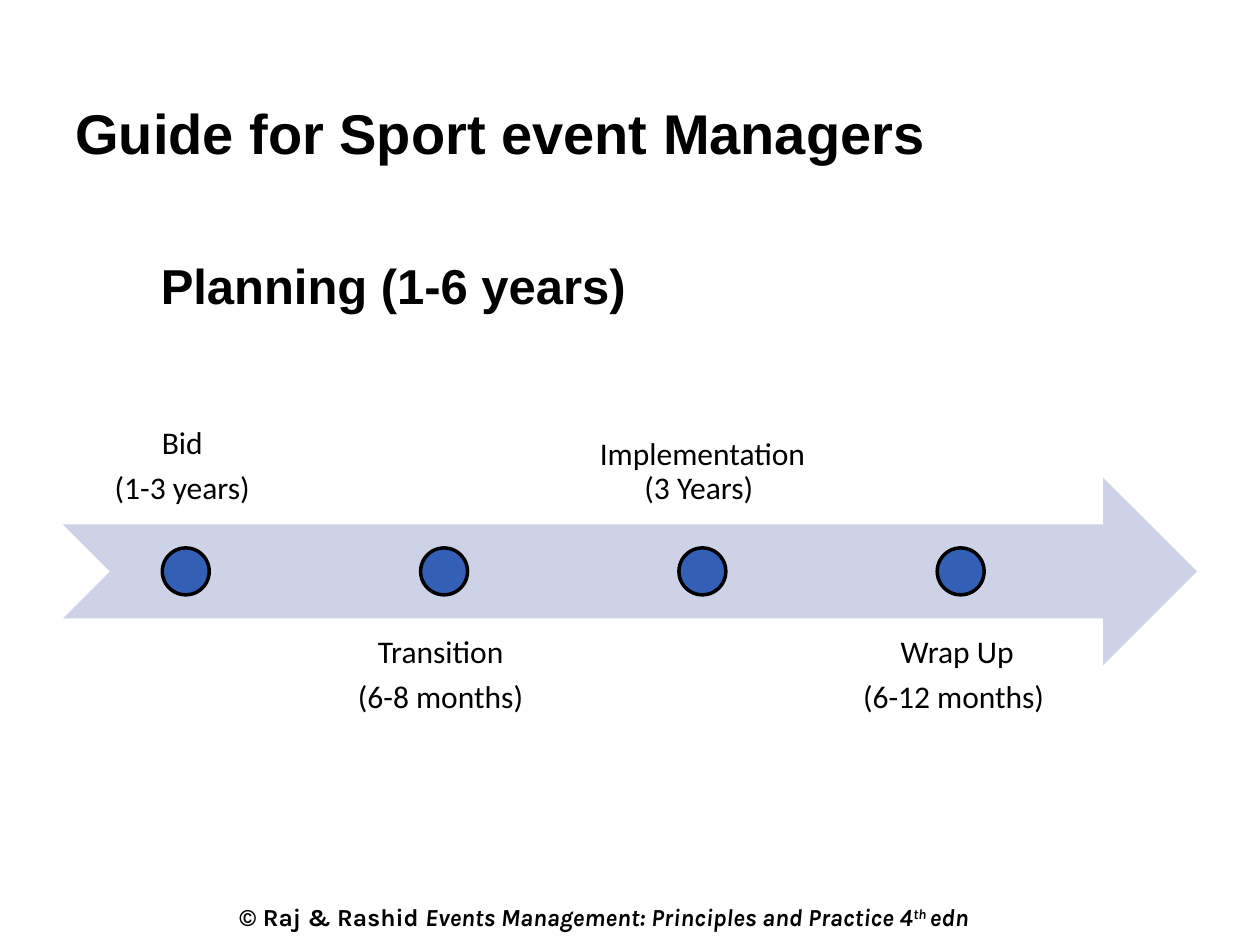
"""Builds the sport event planning timeline slide."""
from pptx import Presentation
from pptx.dml.color import RGBColor
from pptx.enum.shapes import MSO_SHAPE as Shape
from pptx.enum.text import MSO_ANCHOR as Anchor, PP_ALIGN as Align
from pptx.util import Inches, Pt

WIDTH, HEIGHT = 10, 7.5
BLACK, WHITE, BAND, DOT = "000000", "FFFFFF", "CED2E6", "345FB7"
TITLE = "Guide for Sport event Managers"
HEADING = "Planning (1-6 years) "
FOOTER = [
    ("© Raj & Rashid ", {"italic": False}, 0),
    ("Events Management: Principles and Practice 4", {"italic": True}, 0),
    ("th ", {"italic": True}, 30000),
    ("edn", {"italic": True}, 0),
]
STAGES = [
    ["Bid ", "(1-3 years) "],
    ["Transition ", "(6-8 months) "],
    ["Implementation (3 Years) "],
    ["Wrap Up ", "(6-12 months)  "],
]
TITLE_FONT = {"name": "Arial", "size": Pt(32), "bold": True}
HEADING_FONT = {"name": "Arial", "size": Pt(28), "bold": True}
STAGE_FONT = {"name": "Calibri", "size": Pt(18), "bold": False}
FOOTER_FONT = {"name": "Karla", "size": Pt(14), "bold": True}
STAGE_FORMAT = {"alignment": Align.CENTER, "line_spacing": 0.9, "space_after": Pt(6.3)}

MARGIN = WIDTH * 0.05
BAND_WIDTH = WIDTH - 2 * MARGIN
ROW = 1.49
BAND_TOP = 3.79
MIDDLE = BAND_TOP + ROW / 2
DOT_SIZE = ROW / 4
STAGE_WIDTH, PITCH = 1.95, 2.05
ABOVE, BELOW = 2.67, 4.91


def color(code):
    return RGBColor.from_string(code)


def apply(target, values):
    for key, value in values.items():
        setattr(target, key, value)


def add_run(paragraph, text, font):
    run = paragraph.add_run()
    run.text = text
    apply(run.font, font)
    run.font.color.rgb = color(BLACK)
    return run


def write(frame, lines, font, layout):
    for index, line in enumerate(lines):
        paragraph = frame.add_paragraph() if index else frame.paragraphs[0]
        apply(paragraph, layout)
        add_run(paragraph, line, font)


def add_box(slide, place, **frame_format):
    frame = slide.shapes.add_textbox(*map(Inches, place)).text_frame
    apply(frame, {"word_wrap": True, **frame_format})
    return frame


def add_solid(slide, kind, place, fill, outline=None):
    solid = slide.shapes.add_shape(kind, *map(Inches, place))
    solid.shadow.inherit = False
    solid.fill.solid()
    solid.fill.fore_color.rgb = color(fill)
    if outline:
        solid.line.color.rgb = color(outline)
        solid.line.width = Pt(2)
    else:
        solid.line.fill.background()
    return solid


def add_stage(slide, index, lines):
    left = MARGIN + index * PITCH
    below = index % 2
    inset = Inches(0.14)
    frame = add_box(
        slide, (left, BELOW if below else ABOVE, STAGE_WIDTH, ROW),
        vertical_anchor=Anchor.TOP if below else Anchor.BOTTOM,
        margin_left=inset, margin_right=inset, margin_top=inset, margin_bottom=inset)
    write(frame, lines, STAGE_FONT, STAGE_FORMAT)
    dot_left = left + (STAGE_WIDTH - DOT_SIZE) / 2
    add_solid(slide, Shape.OVAL, (dot_left, MIDDLE - DOT_SIZE / 2, DOT_SIZE, DOT_SIZE), DOT, BLACK)


def main():
    deck = Presentation()
    deck.slide_width, deck.slide_height = Inches(WIDTH), Inches(HEIGHT)
    slide = deck.slides.add_slide(deck.slide_layouts[6])

    footer = add_box(slide, (1.8, 7.11, 6.97, 0.34), word_wrap=False).paragraphs[0]
    for text, style, baseline in FOOTER:
        run = add_run(footer, text, {**FOOTER_FONT, **style})
        if baseline:
            run.font._rPr.set("baseline", str(baseline))

    title = add_box(slide, (MARGIN, 0.73, BAND_WIDTH, 1.05))
    write(title, [TITLE], TITLE_FONT, {"alignment": Align.LEFT})

    add_solid(slide, Shape.NOTCHED_RIGHT_ARROW, (MARGIN, BAND_TOP, BAND_WIDTH, ROW), BAND)
    for index, lines in enumerate(STAGES):
        add_stage(slide, index, lines)

    heading = add_solid(slide, Shape.RECTANGLE, (0.59, 1.98, 5.17, 0.5), WHITE).text_frame
    apply(heading, {"word_wrap": True, "vertical_anchor": Anchor.TOP})
    write(heading, [HEADING], HEADING_FONT, {"alignment": Align.CENTER, "space_after": Pt(8)})
    deck.save("out.pptx")


if __name__ == "__main__":
    main()
